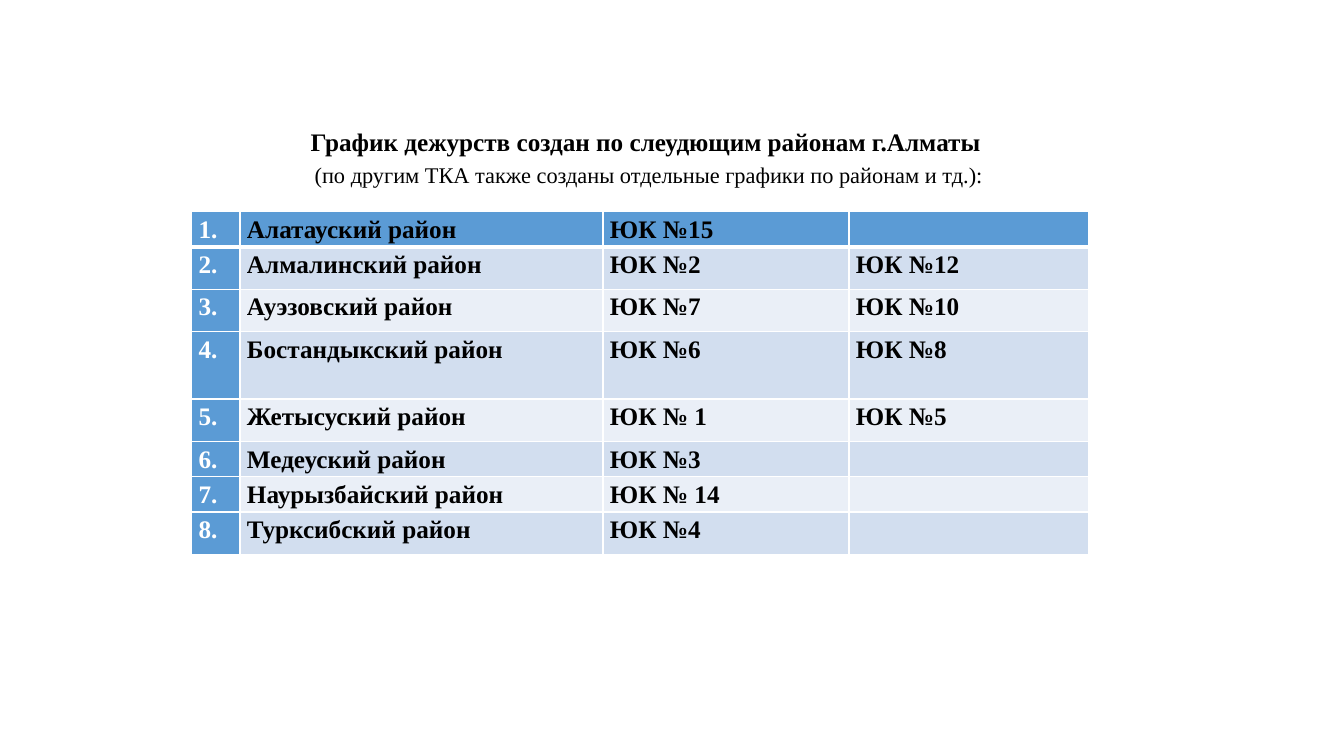
from dataclasses import dataclass

from lxml.etree import SubElement
from pptx import Presentation
from pptx.dml.color import RGBColor
from pptx.enum.text import MSO_ANCHOR as Anchor, MSO_AUTO_SIZE as AutoSize, PP_ALIGN as Align
from pptx.oxml.ns import qn
from pptx.util import Inches, Pt


@dataclass(frozen=True)
class Theme:
    font: str = "Times New Roman"
    heading_size: int = 18
    note_size: int = 16
    table_size: int = 18
    line_spacing: float = 1.15
    ink: str = "000000"
    white: str = "FFFFFF"
    accent: str = "5B9BD5"
    band_dark: str = "D2DEEF"
    band_light: str = "EAEFF7"
    grid_line: int = 1
    header_line: int = 3


THEME = Theme()
COLUMN_WIDTHS = (0.48, 3.6, 2.44, 2.38)
SHORT, NORMAL, TALL = 0.35, 0.42, 0.67

# District, first office, second office, row height
DISTRICTS = (
    ("Алатауский район", "ЮК №15", "", SHORT),
    ("Алмалинский район", "ЮК №2", "ЮК №12", NORMAL),
    ("Ауэзовский район", "ЮК №7", "ЮК №10", NORMAL),
    ("Бостандыкский район", "ЮК №6", "ЮК №8", TALL),
    ("Жетысуский район", "ЮК № 1", "ЮК №5", NORMAL),
    ("Медеуский район", "ЮК №3", "", SHORT),
    ("Наурызбайский район", "ЮК № 14", "", SHORT),
    ("Турксибский район", "ЮК №4", "", NORMAL),
)


def add_run(para, text, size, color, bold=True):
    para.line_spacing = THEME.line_spacing
    run = para.add_run()
    run.text = text
    run.font.name = THEME.font
    run.font.size = Pt(size)
    run.font.bold = bold
    run.font.color.rgb = RGBColor.from_string(color)


def add_heading(page):
    box = page.shapes.title
    box.left, box.top = Inches(1.9), Inches(1.16)
    box.width, box.height = Inches(9.07), Inches(0.74)
    frame = box.text_frame
    frame.word_wrap = True
    frame.auto_size = AutoSize.NONE
    frame.vertical_anchor = Anchor.TOP
    lines = (
        ("График дежурств создан по слеудющим районам г.Алматы ", THEME.heading_size, True),
        ("(по другим ТКА также созданы отдельные графики по районам и тд.):",
         THEME.note_size, False),
    )
    for index, (text, size, bold) in enumerate(lines):
        para = frame.add_paragraph() if index else frame.paragraphs[0]
        para.alignment = Align.CENTER
        add_run(para, text, size, THEME.ink, bold)


def add_borders(cell, top, bottom):
    properties = cell._tc.get_or_add_tcPr()
    widths = {"lnL": THEME.grid_line, "lnR": THEME.grid_line, "lnT": top, "lnB": bottom}
    for side, width in widths.items():
        line = SubElement(properties, qn(f"a:{side}"), w=str(Pt(width)))
        fill = SubElement(line, qn("a:solidFill"))
        SubElement(fill, qn("a:srgbClr"), val=THEME.white)


def cell_fill(row, column):
    if row == 0 or column == 0:
        return THEME.accent
    return THEME.band_dark if row % 2 else THEME.band_light


def format_cell(cell, text, row, column):
    cell.margin_left = cell.margin_right = Inches(0.07)
    cell.margin_top = cell.margin_bottom = 0
    add_borders(
        cell,
        top=THEME.header_line if row == 1 else THEME.grid_line,
        bottom=THEME.header_line if row == 0 else THEME.grid_line,
    )
    cell.fill.solid()
    cell.fill.fore_color.rgb = RGBColor.from_string(cell_fill(row, column))
    if text:
        color = THEME.ink if column else THEME.white
        add_run(cell.text_frame.paragraphs[0], text, THEME.table_size, color)


def add_district_table(page):
    height = sum(district[-1] for district in DISTRICTS)
    table = page.shapes.add_table(
        len(DISTRICTS), len(COLUMN_WIDTHS), Inches(1.9), Inches(2.1),
        Inches(sum(COLUMN_WIDTHS)), Inches(height),
    ).table
    table.first_col = True
    for column, width in zip(table.columns, COLUMN_WIDTHS):
        column.width = Inches(width)
    for row, (*texts, row_height) in enumerate(DISTRICTS):
        table.rows[row].height = Inches(row_height)
        for column, text in enumerate((f"{row + 1}.", *texts)):
            format_cell(table.cell(row, column), text, row, column)


def main():
    deck = Presentation()
    deck.slide_width, deck.slide_height = Inches(13.33), Inches(7.5)
    # The "Title Only" layout
    page = deck.slides.add_slide(deck.slide_layouts[5])
    add_heading(page)
    add_district_table(page)
    deck.save("out.pptx")


if __name__ == "__main__":
    main()
